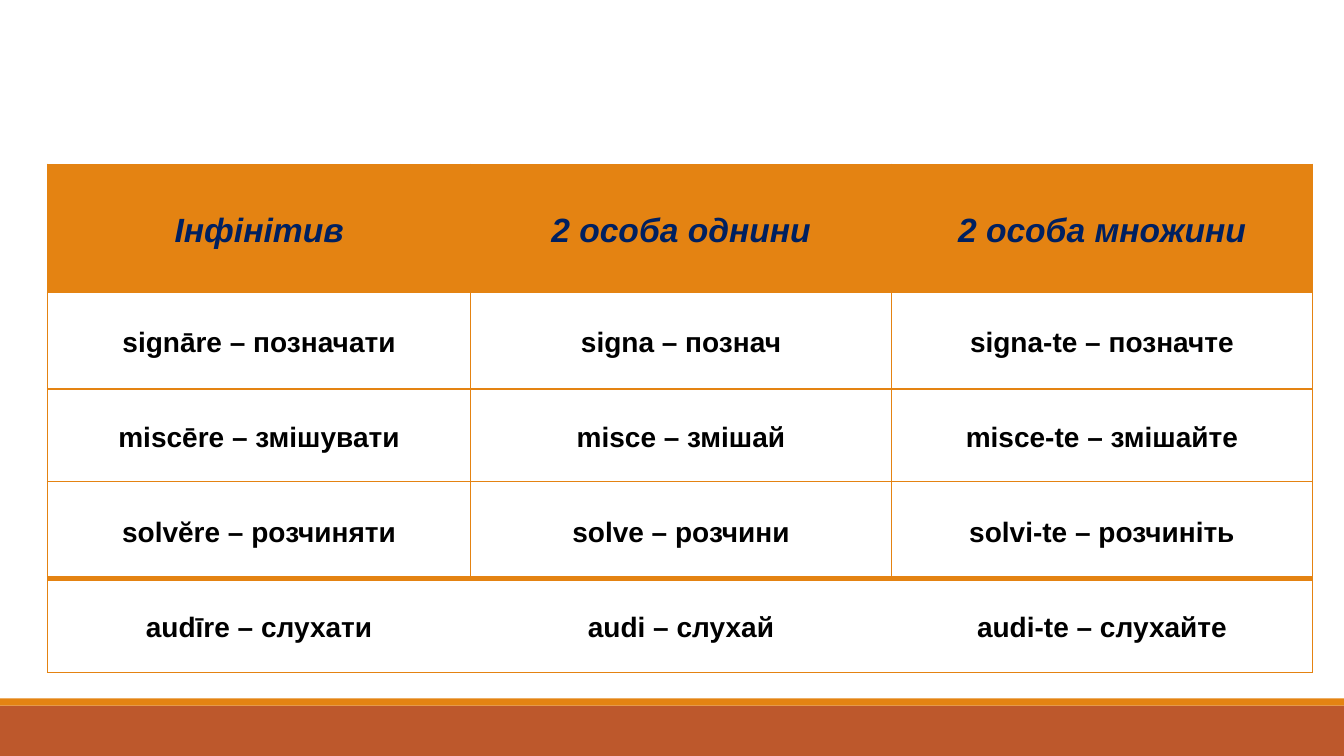
from dataclasses import dataclass

from lxml.etree import SubElement
from pptx import Presentation
from pptx.dml.color import RGBColor
from pptx.enum.shapes import MSO_SHAPE
from pptx.enum.text import MSO_ANCHOR, PP_ALIGN
from pptx.oxml.ns import qn
from pptx.slide import Slide
from pptx.table import Table, _Cell
from pptx.util import Inches, Pt

COLORS = {"orange": "E48312", "rust": "BD582C", "navy": "002060",
          "black": "000000", "white": "FFFFFF"}
WIDTH, HEIGHT = 13.33, 7.5
LEFT, TOP = 0.47, 1.63
COLUMNS = (4.2, 4.17, 4.18)
ROWS = (1.27, 0.96, 0.92, 0.96, 0.93)
THIN, THICK = 1, 4
VERBS = (
    ("Інфінітив", "2 особа однини", "2 особа множини"),
    ("signāre – позначати", "signa – познач", "signa-te – позначте"),
    ("miscēre – змішувати", "misce – змішай", "misce-te – змішайте"),
    ("solvĕre – розчиняти", "solve – розчини", "solvi-te – розчиніть"),
    ("audīre – слухати", "audi – слухай", "audi-te – слухайте"),
)


@dataclass(frozen=True)
class Band:
    top: float
    height: float
    color: str


@dataclass(frozen=True)
class CellStyle:
    size: int
    italic: bool
    color: str
    fill: str


BANDS = (Band(7, 0.5, "rust"), Band(6.93, 0.07, "orange"))
HEADER = CellStyle(24, True, "navy", "orange")
BODY = CellStyle(20, False, "black", "white")


def rgb(name: str) -> RGBColor:
    return RGBColor.from_string(COLORS[name])


def add_band(s: Slide, band: Band) -> None:
    sp = s.shapes.add_shape(MSO_SHAPE.RECTANGLE, 0, Inches(band.top),
                            Inches(WIDTH), Inches(band.height))
    sp.shadow.inherit = False
    sp.fill.solid()
    sp.fill.fore_color.rgb = rgb(band.color)
    sp.line.fill.background()


def set_borders(cell: _Cell, widths: dict[str, int]) -> None:
    """Draw the sides L, R, T, B in points; a width of 0 hides a side."""
    tc_pr = cell._tc.get_or_add_tcPr()
    for side, width in widths.items():
        ln = SubElement(tc_pr, qn(f"a:ln{side}"), w=str(Pt(width)))
        if width:
            fill = SubElement(ln, qn("a:solidFill"))
            SubElement(fill, qn("a:srgbClr"), val=COLORS["orange"])
        else:
            SubElement(ln, qn("a:noFill"))


def write_cell(cell: _Cell, text: str, style: CellStyle) -> None:
    layout = {"vertical_anchor": MSO_ANCHOR.MIDDLE,
              "margin_left": Inches(0.07), "margin_right": Inches(0.07),
              "margin_top": 0, "margin_bottom": 0}
    for name, value in layout.items():
        setattr(cell, name, value)
    cell.fill.solid()
    cell.fill.fore_color.rgb = rgb(style.fill)
    p = cell.text_frame.paragraphs[0]
    p.alignment, p.line_spacing = PP_ALIGN.CENTER, 1.15
    r = p.add_run()
    r.text = text
    font = {"name": "Arial", "size": Pt(style.size), "bold": True,
            "italic": style.italic}
    for name, value in font.items():
        setattr(r.font, name, value)
    r.font.color.rgb = rgb(style.color)


def fill_table(table: Table) -> None:
    for column, width in zip(table.columns, COLUMNS):
        column.width = Inches(width)
    for row, height in zip(table.rows, ROWS):
        row.height = Inches(height)
    last_row, last_col = len(ROWS) - 1, len(COLUMNS) - 1
    for i, texts in enumerate(VERBS):
        inner = 0 if i == last_row else THIN
        for j, text in enumerate(texts):
            cell = table.cell(i, j)
            set_borders(cell, {
                "L": THIN if j == 0 else inner,
                "R": THIN if j == last_col else inner,
                "T": THICK if i == last_row else THIN,
                "B": THICK if i == last_row - 1 else THIN,
            })
            write_cell(cell, text, BODY if i else HEADER)


def main() -> None:
    prs = Presentation()
    prs.slide_width, prs.slide_height = Inches(WIDTH), Inches(HEIGHT)
    s = prs.slides.add_slide(prs.slide_layouts[6])
    for band in BANDS:
        add_band(s, band)
    frame = s.shapes.add_table(len(ROWS), len(COLUMNS), Inches(LEFT), Inches(TOP),
                               Inches(sum(COLUMNS)), Inches(sum(ROWS)))
    fill_table(frame.table)
    prs.save("out.pptx")


if __name__ == "__main__":
    main()
